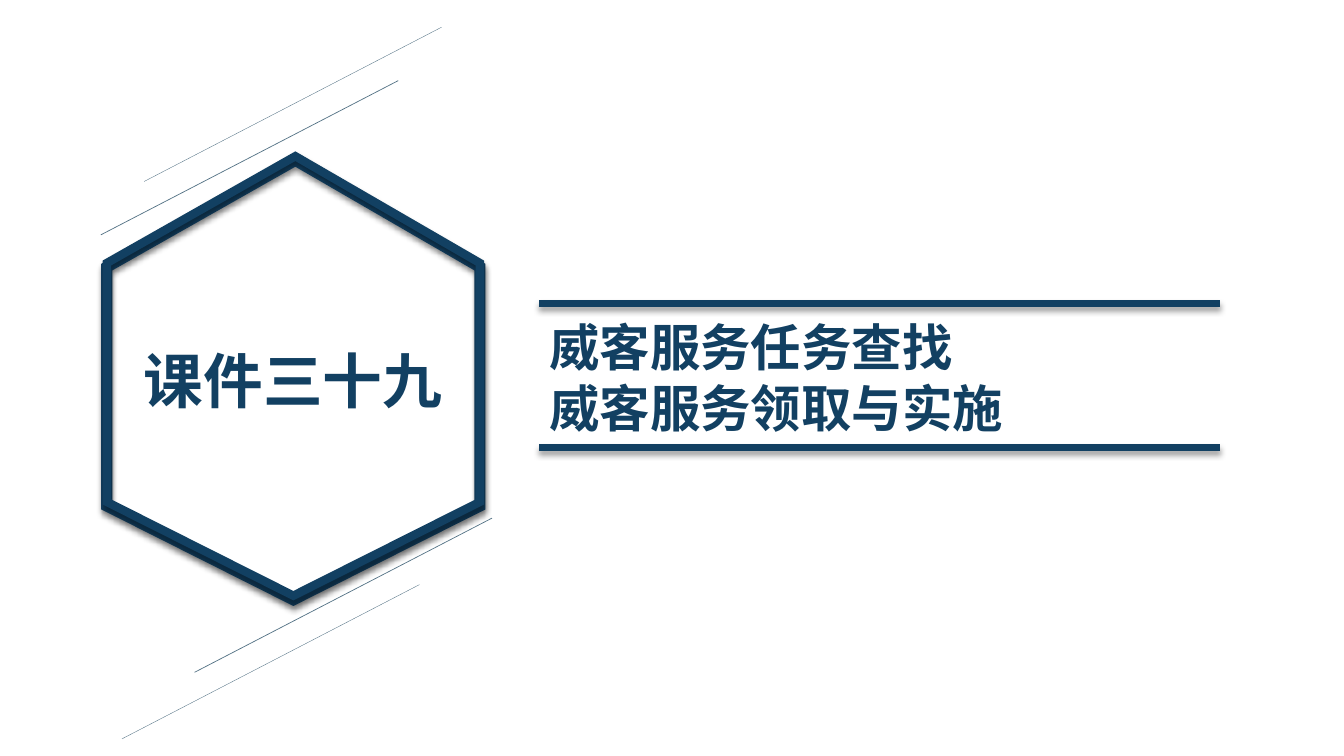
from lxml import etree
from pptx import Presentation
from pptx import util as u
from pptx.dml.color import RGBColor
from pptx.enum import shapes, text
from pptx.oxml import parse_xml
from pptx.oxml.ns import nsdecls, qn

THEME = {
    "navy": RGBColor.from_string("124062"),
    "slate": RGBColor.from_string("537285"),
    "sans": "Arial",
    "cjk": "Noto Sans CJK SC",
    "badge": 42.6,
    "title": 36,
}
HEX = [(2.93, 0), (4.76, 1.06), (4.76, 3.43), (2.91, 4.36), (1.06, 3.43), (1.06, 1.06)]
RINGS = [(1.59, 8), (1.55, 6)]
RULES = [3.01, 4.44]
RULE_X = (5.35, 12.1)
SLANT = (2.95, -1.53)
SLANTS = [(1.93, 6.67, 0.5), (1.21, 7.33, 0.25), (1, 2.33, 0.5), (1.43, 1.8, 0.25)]
TEXTS = [
    {"box": (5.35, 3.09, 6.32, 1.31), "lines": ["威客服务任务查找", "威客服务领取与实施"],
     "size": "title", "face": "cjk", "wrap": True},
    {"box": (1.33, 3.36, 3.17, 0.82), "lines": ["课件三十九"],
     "size": "badge", "face": "sans", "wrap": False},
]
SHADOW = (
    f'<a:effectLst {nsdecls("a")}><a:outerShdw blurRad="{u.Pt(4)}" dist="{u.Pt(3)}" '
    'dir="5400000" algn="t" rotWithShape="0"><a:srgbClr val="000000">'
    '<a:alpha val="40000"/></a:srgbClr></a:outerShdw></a:effectLst>'
)
PLAIN = f'<a:effectLst {nsdecls("a")}/>'


def stroke(item, color, width, effect):
    item.line.color.rgb = THEME[color]
    item.line.width = u.Pt(width)
    item._element.spPr.append(parse_xml(effect))


def add_ring(group, top, width):
    pts = [(u.Inches(x), u.Inches(top + y)) for x, y in HEX]
    path = group.shapes.build_freeform(*pts[0])
    path.add_line_segments(pts[1:], close=True)
    ring = path.convert_to_shape()
    ring.fill.background()
    stroke(ring, "navy", width, SHADOW)
    edge = ring._element.spPr.find(qn("a:ln"))
    etree.SubElement(edge, qn("a:miter")).set("lim", "800000")


def add_line(slide, ends, color, width, effect):
    line = slide.shapes.add_connector(shapes.MSO_CONNECTOR.STRAIGHT, *map(u.Inches, ends))
    stroke(line, color, width, effect)


def add_text(slide, box, lines, size, face, wrap):
    frame = slide.shapes.add_textbox(*map(u.Inches, box)).text_frame
    frame.word_wrap = wrap
    frame.auto_size = text.MSO_AUTO_SIZE.SHAPE_TO_FIT_TEXT
    look = {"size": u.Pt(THEME[size]), "name": THEME[face], "bold": True}
    for i, words in enumerate(lines):
        para = frame.add_paragraph() if i else frame.paragraphs[0]
        run = para.add_run()
        run.text = words
        for key, value in look.items():
            setattr(run.font, key, value)
        run.font.color.rgb = THEME["navy"]
        props = run._r.get_or_add_rPr()
        props.set("lang", "zh-CN")
        etree.SubElement(props, qn("a:ea")).set("typeface", THEME["cjk"])


def main():
    deck = Presentation()
    deck.slide_width, deck.slide_height = u.Inches(13.33), u.Inches(7.5)
    slide = deck.slides.add_slide(deck.slide_layouts[6])
    group = slide.shapes.add_group_shape()
    for top, width in RINGS:
        add_ring(group, top, width)
    for y in RULES:
        add_line(slide, (RULE_X[0], y, RULE_X[1], y), "navy", 4.5, SHADOW)
    for x, y, width in SLANTS:
        add_line(slide, (x, y, x + SLANT[0], y + SLANT[1]), "slate", width, PLAIN)
    for item in TEXTS:
        add_text(slide, **item)
    deck.save("out.pptx")


if __name__ == "__main__":
    main()
